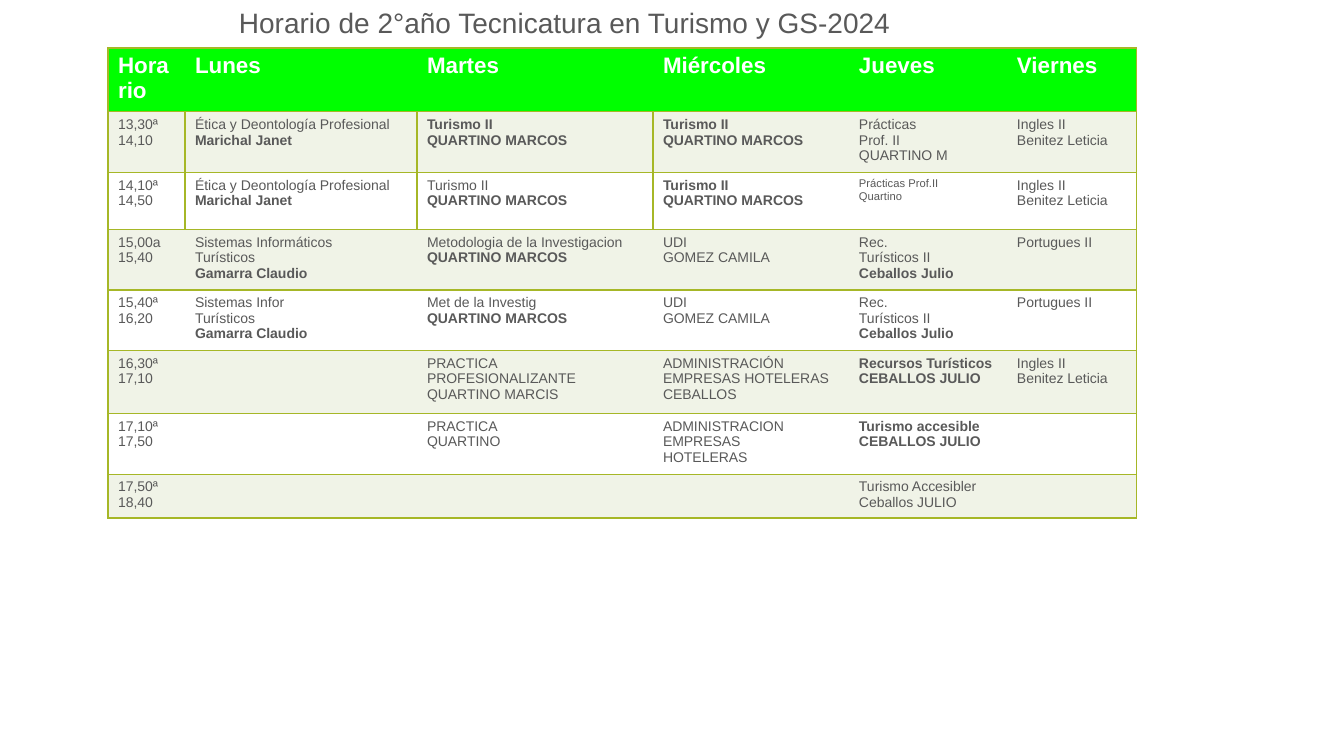
from lxml import etree
from pptx import Presentation
from pptx import util as u
from pptx.dml.color import RGBColor
from pptx.enum import text
from pptx.oxml import ns

PX = 9071
COLORS = {"text": "595959", "white": "FFFFFF", "header": "00FF00",
          "band": "F0F3E7", "line": "A6B727"}
COLS = [77, 232, 236, 196, 158, 130]
ROWS = [60, 60, 57, 59, 58, 63, 57, 41]
TITLE = {"size": u.Pt(20), "bold": False}
HEADER = {"size": u.Pt(16), "bold": True}
BODY = {"size": u.Pt(10), "bold": False}
SMALL = {"size": u.Pt(8), "bold": False}
SMALL_CELL = (2, 4)
BOXED_ROWS = (1, 2)
BOXED_EDGES = (1, 2, 3)

# An asterisk opens a bold paragraph.
SCHEDULE = [
    ["Horario", "Lunes", "Martes", "Miércoles", "Jueves", "Viernes"],
    ["13,30ª\n14,10", "Ética y Deontología Profesional\n*Marichal Janet",
     "*Turismo II\n*QUARTINO MARCOS", "*Turismo II\n*QUARTINO MARCOS",
     "Prácticas\nProf. II\nQUARTINO M", "Ingles II\nBenitez Leticia"],
    ["14,10ª\n14,50", "Ética y Deontología Profesional\n*Marichal Janet",
     "Turismo II\n*QUARTINO MARCOS", "*Turismo II\n*QUARTINO MARCOS",
     "Prácticas Prof.II\nQuartino", "Ingles II\nBenitez Leticia"],
    ["15,00a\n15,40", "Sistemas Informáticos\nTurísticos\n*Gamarra Claudio",
     "Metodologia de la Investigacion\n*QUARTINO MARCOS", "UDI\nGOMEZ CAMILA",
     "Rec.\nTurísticos II\n*Ceballos Julio", "Portugues II"],
    ["15,40ª\n16,20", "Sistemas Infor\nTurísticos\n*Gamarra Claudio",
     "Met de la Investig\n*QUARTINO MARCOS", "UDI\nGOMEZ CAMILA",
     "Rec.\nTurísticos II\n*Ceballos Julio", "Portugues II"],
    ["16,30ª\n17,10", "", "PRACTICA PROFESIONALIZANTE\nQUARTINO MARCIS",
     "ADMINISTRACIÓN EMPRESAS HOTELERAS\nCEBALLOS",
     "*Recursos Turísticos\n*CEBALLOS JULIO", "Ingles II\nBenitez Leticia"],
    ["17,10ª\n17,50", "", "PRACTICA\nQUARTINO",
     "ADMINISTRACION EMPRESAS\nHOTELERAS",
     "*Turismo accesible\n*CEBALLOS JULIO", ""],
    ["17,50ª\n18,40", "", "", "", "Turismo Accesibler\nCeballos JULIO", ""],
]


def rgb(name):
    """Return a named colour."""
    return RGBColor.from_string(COLORS[name])


def write(tf, content, style, color):
    """Fill a text frame with one paragraph per line."""
    for i, line in enumerate(content.split("\n")):
        p = tf.add_paragraph() if i else tf.paragraphs[0]
        r = p.add_run()
        r.text = line.lstrip("*")
        values = {**style, "name": "Arial"}
        if line.startswith("*"):
            values["bold"] = True
        for key, value in values.items():
            setattr(r.font, key, value)
        r.font.color.rgb = rgb(color)


def add_title(s, content):
    """Add the slide heading."""
    sp = s.shapes.add_textbox(*(n * PX for n in (229, 0, 1033, 48)))
    tf = sp.text_frame
    tf.word_wrap = True
    tf.vertical_anchor = text.MSO_ANCHOR.MIDDLE
    write(tf, content, TITLE, "text")
    tf.paragraphs[0].line_spacing = 0.9


def set_borders(cell, edges):
    """Draw the given edges of a cell and clear the others."""
    tc_pr = cell._tc.get_or_add_tcPr()
    for edge in "LRTB":
        ln = etree.SubElement(tc_pr, ns.qn(f"a:ln{edge}"), w=str(u.Pt(1)))
        if edge in edges:
            fill = etree.SubElement(ln, ns.qn("a:solidFill"))
            etree.SubElement(fill, ns.qn("a:srgbClr"), val=COLORS["line"])
        else:
            etree.SubElement(ln, ns.qn("a:noFill"))


def cell_edges(row, col):
    """Return the edges drawn around a cell."""
    def ruled(edge):
        return edge in (0, len(COLS)) or (row in BOXED_ROWS and edge in BOXED_EDGES)
    return "TB" + "L" * ruled(col) + "R" * ruled(col + 1)


def add_schedule(s):
    """Add the weekly timetable."""
    box = (108, 48, sum(COLS), sum(ROWS))
    table = s.shapes.add_table(len(ROWS), len(COLS), *(n * PX for n in box)).table
    table.first_row = table.horz_banding = False
    for col, width in zip(table.columns, COLS):
        col.width = width * PX
    for i, height in enumerate(ROWS):
        table.rows[i].height = height * PX
        fill = "band" if i % 2 else "white" if i else "header"
        for j, content in enumerate(SCHEDULE[i]):
            cell = table.cell(i, j)
            set_borders(cell, cell_edges(i, j))
            cell.fill.solid()
            cell.fill.fore_color.rgb = rgb(fill)
            style = SMALL if (i, j) == SMALL_CELL else BODY if i else HEADER
            if content:
                write(cell.text_frame, content, style, "text" if i else "white")


def main():
    """Build and save the slide."""
    prs = Presentation()
    prs.slide_width, prs.slide_height = 1344 * PX, 756 * PX
    s = prs.slides.add_slide(prs.slide_layouts[6])
    add_title(s, "Horario de 2°año Tecnicatura en Turismo y GS-2024")
    add_schedule(s)
    prs.save("out.pptx")


if __name__ == "__main__":
    main()
